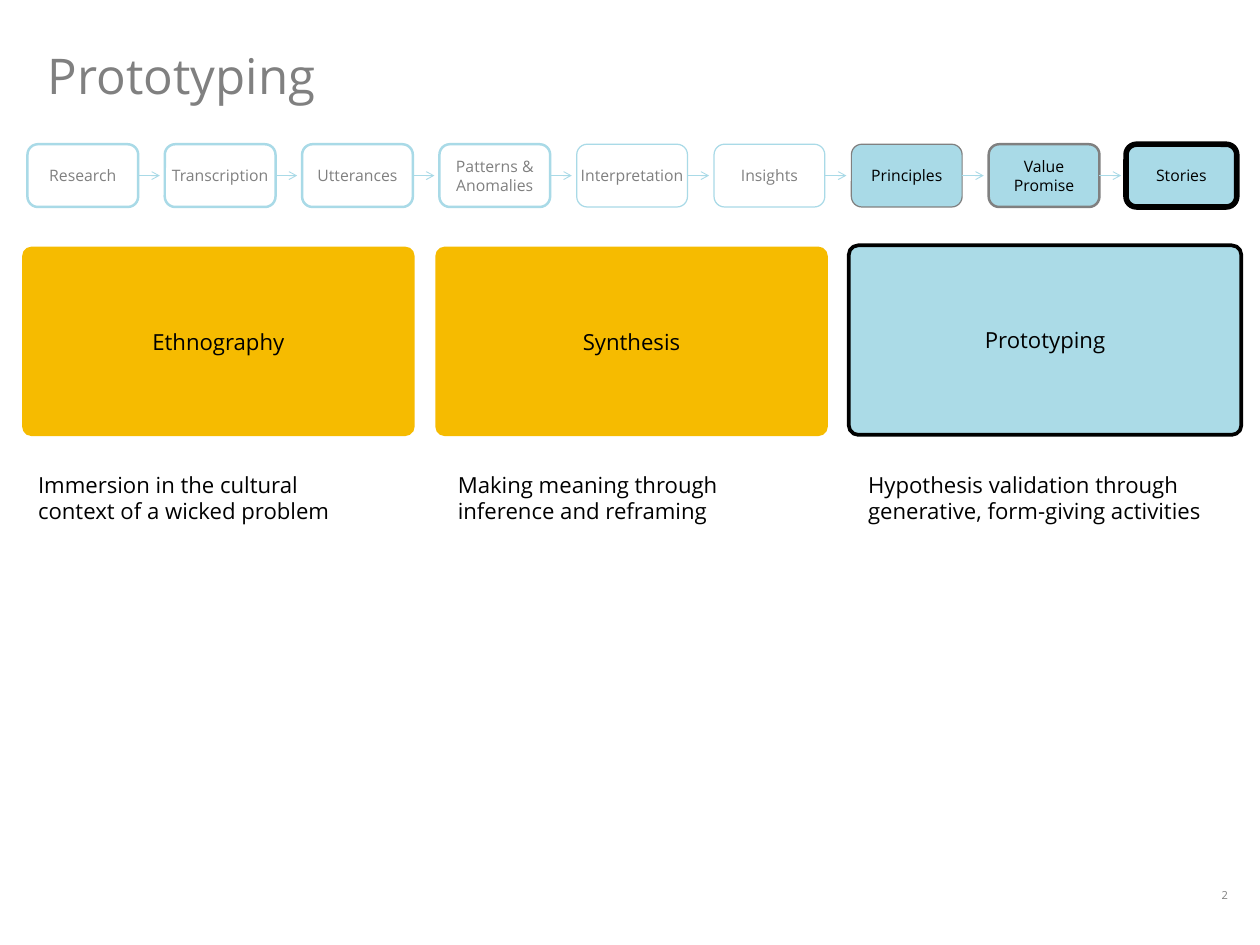
from lxml.etree import SubElement
from pptx import Presentation
from pptx.dml.color import RGBColor
from pptx.enum.shapes import MSO_CONNECTOR, MSO_SHAPE
from pptx.enum.text import MSO_ANCHOR, MSO_AUTO_SIZE, PP_ALIGN
from pptx.oxml.ns import qn
from pptx.util import Pt

FONT = "Open Sans"
COLORS = {
    "grey": "808080",
    "black": "000000",
    "white": "FFFFFF",
    "pale blue": "A9DAE7",
    "blue": "6FC2D7",
    "yellow": "F6BB00",
}

# label, fill, line colour, line width, text colour
STEPS = [
    ("Research", "white", "pale blue", 2, "grey"),
    ("Transcription", "white", "pale blue", 2, "grey"),
    ("Utterances", "white", "pale blue", 2, "grey"),
    ("Patterns & Anomalies", None, "pale blue", 2, "grey"),
    ("Interpretation", None, "pale blue", 1, "grey"),
    ("Insights", None, "pale blue", 1, "grey"),
    ("Principles", "pale blue", "grey", 1, "black"),
    ("Value\nPromise", "pale blue", "grey", 2, "black"),
    ("Stories", "pale blue", "black", 4.5, "black"),
]
STEP_LEFT, STEP_TOP, STEP_PITCH = 22.3, 117.2, 111.6
STEP_WIDTH, STEP_HEIGHT = 90, 51
ARROW_LENGTH = 17.6

# label, left, top, fill, opacity, line colour, caption, caption left
PHASES = [
    ("Ethnography", 18, 200.4, "yellow", 100, None,
     "Immersion in the cultural context of a wicked problem", 23.8),
    ("Synthesis", 353.8, 200.4, "yellow", 100, None,
     "Making meaning through inference and reframing", 365),
    ("Prototyping", 689.8, 199.4, "blue", 58, "black",
     "Hypothesis validation through generative, form-giving activities", 698.4),
]
PHASE_WIDTH, PHASE_HEIGHT = 319, 154


def rgb(name):
    return RGBColor.from_string(COLORS[name])


class SlideBuilder:
    def __init__(self, slide):
        self.slide = slide

    def fill_text(self, shape, text, size, color, align=PP_ALIGN.LEFT):
        frame = shape.text_frame
        frame.word_wrap = True
        frame.text = text
        for paragraph in frame.paragraphs:
            paragraph.alignment = align
            paragraph.font.name = FONT
            paragraph.font.size = Pt(size)
            paragraph.font.color.rgb = rgb(color)
        return frame

    def title(self, text, left, top, width, height):
        title = self.slide.shapes.title
        title.left, title.top = Pt(left), Pt(top)
        title.width, title.height = Pt(width), Pt(height)
        frame = self.fill_text(title, text, 40, "grey")
        frame.auto_size = MSO_AUTO_SIZE.NONE
        frame.vertical_anchor = MSO_ANCHOR.MIDDLE
        frame.margin_left = frame.margin_right = Pt(0)
        frame.margin_top = frame.margin_bottom = Pt(0)

    def text(self, text, left, top, width, height, size, color, align=PP_ALIGN.LEFT):
        box = self.slide.shapes.add_textbox(Pt(left), Pt(top), Pt(width), Pt(height))
        self.fill_text(box, text, size, color, align)

    def box(self, text, left, top, width, height, fill, line, line_width,
            size, color, opacity=100, rounding=None, side_margin=7.2):
        """Add a rounded box; a fill or line of None is left out."""
        box = self.slide.shapes.add_shape(
            MSO_SHAPE.ROUNDED_RECTANGLE, Pt(left), Pt(top), Pt(width), Pt(height))
        box.shadow.inherit = False
        if rounding is not None:
            box.adjustments[0] = rounding
        if fill:
            box.fill.solid()
            box.fill.fore_color.rgb = rgb(fill)
        else:
            box.fill.background()
        if opacity < 100:
            color_element = box._element.spPr.find(qn("a:solidFill"))[0]
            SubElement(color_element, qn("a:alpha"), val=str(opacity * 1000))
        if line:
            box.line.color.rgb = rgb(line)
            box.line.width = Pt(line_width)
        else:
            box.line.fill.background()
        frame = self.fill_text(box, text, size, color, PP_ALIGN.CENTER)
        frame.vertical_anchor = MSO_ANCHOR.MIDDLE
        frame.margin_left = frame.margin_right = Pt(side_margin)
        return box

    def arrow_from(self, box, length):
        """Draw an arrow rightwards from the middle of the box's right side."""
        start, middle = box.left + box.width, box.top + box.height // 2
        arrow = self.slide.shapes.add_connector(
            MSO_CONNECTOR.STRAIGHT, start, middle, start + Pt(length), middle)
        arrow.begin_connect(box, 3)
        arrow.line.color.rgb = rgb("pale blue")
        arrow.line.width = Pt(0.75)
        line_element = arrow._element.spPr.find(qn("a:ln"))
        SubElement(line_element, qn("a:tailEnd"), type="arrow")
        SubElement(arrow._element.spPr, qn("a:effectLst"))


def main():
    presentation = Presentation()
    presentation.slide_width, presentation.slide_height = Pt(1024), Pt(768)
    slide = presentation.slides.add_slide(presentation.slide_layouts[5])
    builder = SlideBuilder(slide)

    builder.title("Prototyping", 39, 36.7, 912, 48)
    builder.text("2", 977, 718.6, 36.7, 21.6, 9, "grey", PP_ALIGN.CENTER)

    for index, (label, fill, line, line_width, color) in enumerate(STEPS):
        step = builder.box(
            label, STEP_LEFT + index * STEP_PITCH, STEP_TOP, STEP_WIDTH, STEP_HEIGHT,
            fill, line, line_width, 12.8, color, side_margin=0)
        if index < len(STEPS) - 1:
            builder.arrow_from(step, ARROW_LENGTH)

    for label, left, top, fill, opacity, line, caption, caption_left in PHASES:
        builder.box(label, left, top, PHASE_WIDTH, PHASE_HEIGHT, fill, line, 3,
                    18, "black", opacity=opacity, rounding=0.05)
        builder.text(caption, caption_left, 379.4, 289.4, 51, 18, "black")

    presentation.save("out.pptx")


if __name__ == "__main__":
    main()
